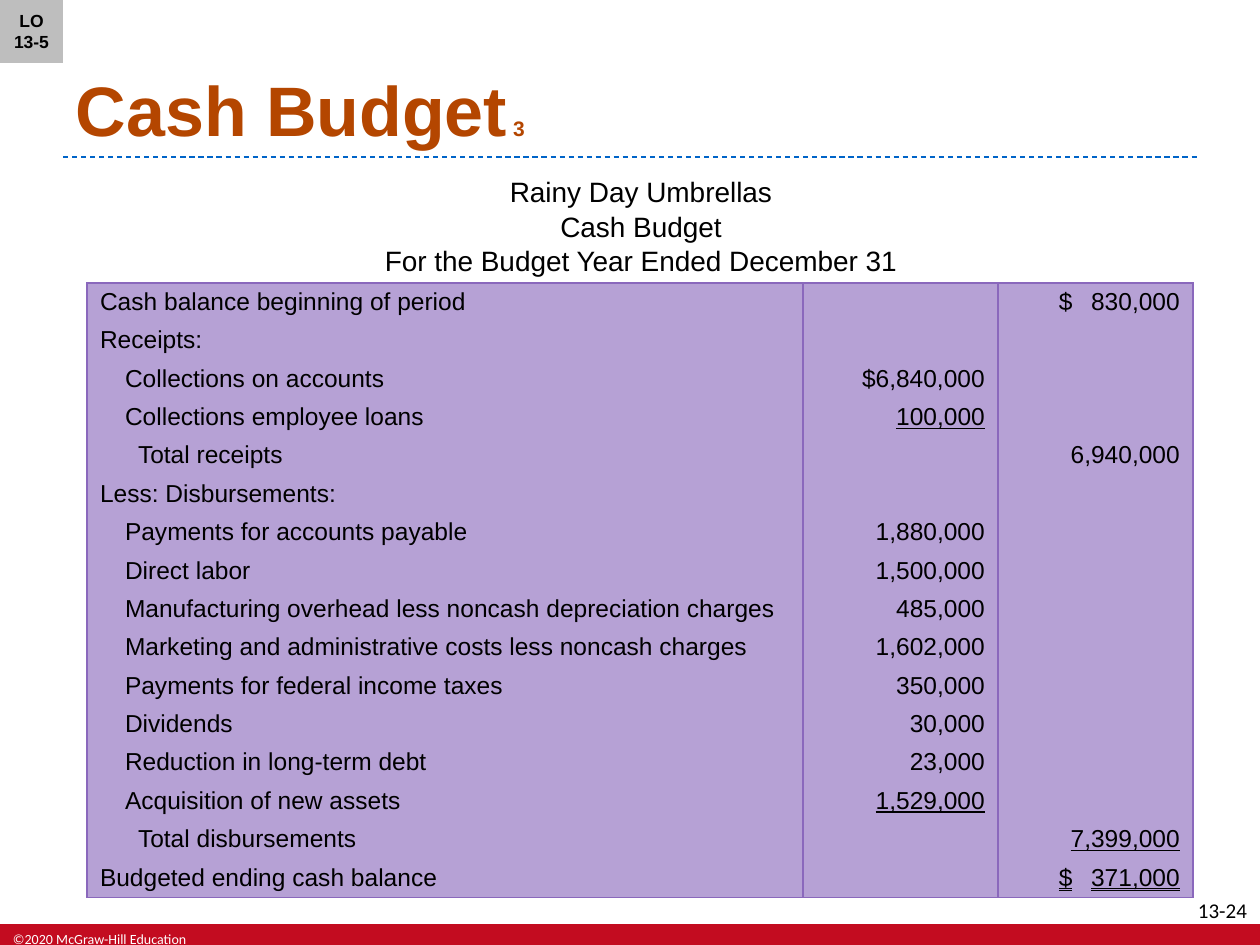
from lxml import etree
from pptx import Presentation
from pptx.dml.color import RGBColor
from pptx.enum.dml import MSO_LINE
from pptx.enum.shapes import MSO_CONNECTOR, MSO_SHAPE
from pptx.enum.text import MSO_ANCHOR, MSO_UNDERLINE, PP_ALIGN
from pptx.oxml.ns import qn
from pptx.util import Emu, Pt

LEFT, CENTER, RIGHT = PP_ALIGN.LEFT, PP_ALIGN.CENTER, PP_ALIGN.RIGHT
TOP, MIDDLE, BOTTOM = MSO_ANCHOR.TOP, MSO_ANCHOR.MIDDLE, MSO_ANCHOR.BOTTOM
SINGLE, DOUBLE = MSO_UNDERLINE.SINGLE_LINE, MSO_UNDERLINE.DOUBLE_LINE

COLORS = {
    "text": "000000", "white": "FFFFFF", "title": "B44600", "rule": "0064C8",
    "bar": "C30C20", "badge": "BEBEBE", "cell": "B6A1D5", "border": "8A68BC",
}

TITLE, TITLE_PART = "Cash Budget", " 3"
HEADING = ["Rainy Day Umbrellas", "Cash Budget", "For the Budget Year Ended December 31"]
BADGE = "LO 13-5"
COPYRIGHT = "©2020 McGraw-Hill Education"
PAGE = "13-24"

# label, indent level, detail amount, total amount; a tab sets the figure flush right
BUDGET = [
    ("Cash balance beginning of period", 0, "", "$\t830,000"),
    ("Receipts:", 0, "", ""),
    ("Collections on accounts", 1, "$6,840,000", ""),
    ("Collections employee loans", 1, "\t100,000", ""),
    ("Total receipts", 2, "", "6,940,000"),
    ("Less: Disbursements:", 0, "", ""),
    ("Payments for accounts payable", 1, "1,880,000", ""),
    ("Direct labor", 1, "1,500,000", ""),
    ("Manufacturing overhead less noncash depreciation charges", 1, "485,000", ""),
    ("Marketing and administrative costs less noncash charges", 1, "1,602,000", ""),
    ("Payments for federal income taxes", 1, "350,000", ""),
    ("Dividends", 1, "30,000", ""),
    ("Reduction in long-term debt", 1, "23,000", ""),
    ("Acquisition of new assets", 1, "1,529,000", ""),
    ("Total disbursements", 2, "", "7,399,000"),
    ("Budgeted ending cash balance", 0, "", "$\t371,000"),
]
UNDERLINES = {(3, 1): SINGLE, (13, 1): SINGLE, (14, 2): SINGLE, (15, 2): DOUBLE}

INDENTS = [0, 25, 38]
COLUMNS = [716, 195, 195]
TABLE_LEFT, TABLE_TOP, TABLE_HEIGHT = 87, 283, 602
SIDE_MARGIN, TAB_MARGIN = 13, 61
PLAIN_TABLE = "{2D5ABB26-0587-4C30-8999-92F81FD0307C}"


def px(n):
    return Emu(round(n * 914400 / 126))


def rgb(name):
    return RGBColor.from_string(COLORS[name])


def style(font, size, color="text", bold=False, name="Arial"):
    font.name, font.size, font.bold = name, Pt(size), bold
    font.color.rgb = rgb(color)


def write(sp, lines, size, align=LEFT, anchor=TOP, side=13, **look):
    tf = sp.text_frame
    tf.word_wrap, tf.vertical_anchor = True, anchor
    tf.margin_left = tf.margin_right = px(side)
    tf.margin_top = tf.margin_bottom = px(6)
    tf.text = "\n".join(lines)
    for i, p in enumerate(tf.paragraphs):
        p.alignment = align
        if i:
            p.space_before = Pt(0.7)
        for r in p.runs:
            style(r.font, size, **look)


def add_text(slide, box, lines, size, **look):
    write(slide.shapes.add_textbox(*map(px, box)), lines, size, **look)


def add_rect(slide, box, color):
    sp = slide.shapes.add_shape(MSO_SHAPE.RECTANGLE, *map(px, box))
    sp.shadow.inherit = False
    sp.fill.solid()
    sp.fill.fore_color.rgb = rgb(color)
    sp.line.fill.background()
    return sp


def add_borders(cell, sides):
    tc_pr = cell._tc.get_or_add_tcPr()
    for side in sides:
        ln = etree.SubElement(tc_pr, qn("a:ln" + side), w=str(Pt(1)))
        fill = etree.SubElement(ln, qn("a:solidFill"))
        etree.SubElement(fill, qn("a:srgbClr"), val=COLORS["border"])


def fill_cell(cell, text, align, indent, underline):
    cell.fill.solid()
    cell.fill.fore_color.rgb = rgb("cell")
    cell.margin_left = cell.margin_right = px(SIDE_MARGIN)
    cell.margin_top, cell.margin_bottom = px(5), px(4)
    p = cell.text_frame.paragraphs[0]
    p.text = text
    p.alignment = align
    p_pr = p._p.get_or_add_pPr()
    if indent:
        p_pr.set("marL", str(px(indent)))
    if "\t" in text:
        p.alignment = LEFT
        cell.margin_left = px(TAB_MARGIN)
        tabs = etree.SubElement(p_pr, qn("a:tabLst"))
        stop = COLUMNS[-1] - TAB_MARGIN - SIDE_MARGIN
        etree.SubElement(tabs, qn("a:tab"), pos=str(px(stop)), algn="r")
    for r in p.runs:
        style(r.font, 14)
        r.font.underline = underline
    if not text:  # keeps an empty cell from stretching its row
        etree.SubElement(p._p, qn("a:endParaRPr"), sz="1400")


def add_budget(slide):
    rows = len(BUDGET)
    table = slide.shapes.add_table(rows, len(COLUMNS), px(TABLE_LEFT), px(TABLE_TOP),
                                   px(sum(COLUMNS)), px(TABLE_HEIGHT)).table
    table.first_row = table.horz_banding = False
    table._tbl.tblPr.find(qn("a:tableStyleId")).text = PLAIN_TABLE
    for col, width in zip(table.columns, COLUMNS):
        col.width = px(width)
    for i, (label, level, detail, total) in enumerate(BUDGET):
        table.rows[i].height = px(TABLE_HEIGHT / rows)
        sides = "LR" + ("T" if i == 0 else "B" if i == rows - 1 else "")
        for j, text in enumerate((label, detail, total)):
            cell = table.cell(i, j)
            add_borders(cell, sides)
            fill_cell(cell, text, RIGHT if j else LEFT,
                      0 if j else INDENTS[level], UNDERLINES.get((i, j)))


def add_title(slide):
    title = slide.shapes.title
    title.left, title.top, title.width, title.height = map(px, (63, 6, 1134, 151))
    write(title, [TITLE], 40, anchor=BOTTOM, color="title", bold=True)
    r = title.text_frame.paragraphs[0].add_run()
    r.text = TITLE_PART
    style(r.font, 12, "title", True)


def add_rule(slide):
    rule = slide.shapes.add_connector(MSO_CONNECTOR.STRAIGHT, *map(px, (63, 157, 1197, 157)))
    rule.line.color.rgb = rgb("rule")
    rule.line.width = Pt(0.75)
    rule.line.dash_style = MSO_LINE.DASH
    etree.SubElement(rule._element.spPr, qn("a:effectLst"))


def main():
    prs = Presentation()
    prs.slide_width, prs.slide_height = px(1260), px(945)
    slide = prs.slides.add_slide(prs.slide_layouts[5])
    add_rect(slide, (0, 924, 1260, 21), "bar")
    add_text(slide, (0, 924, 202, 21), [COPYRIGHT], 8, color="white", name="Calibri")
    add_text(slide, (1172, 892, 88, 25), [PAGE], 12, align=RIGHT, name="Calibri")
    add_rule(slide)
    add_title(slide)
    add_text(slide, (305, 168, 672, 116), HEADING, 16, align=CENTER, anchor=MIDDLE)
    add_budget(slide)
    badge = add_rect(slide, (0, 0, 63, 63), "badge")
    write(badge, [BADGE], 10, align=CENTER, anchor=MIDDLE, side=10, bold=True)
    prs.save("out.pptx")


if __name__ == "__main__":
    main()
